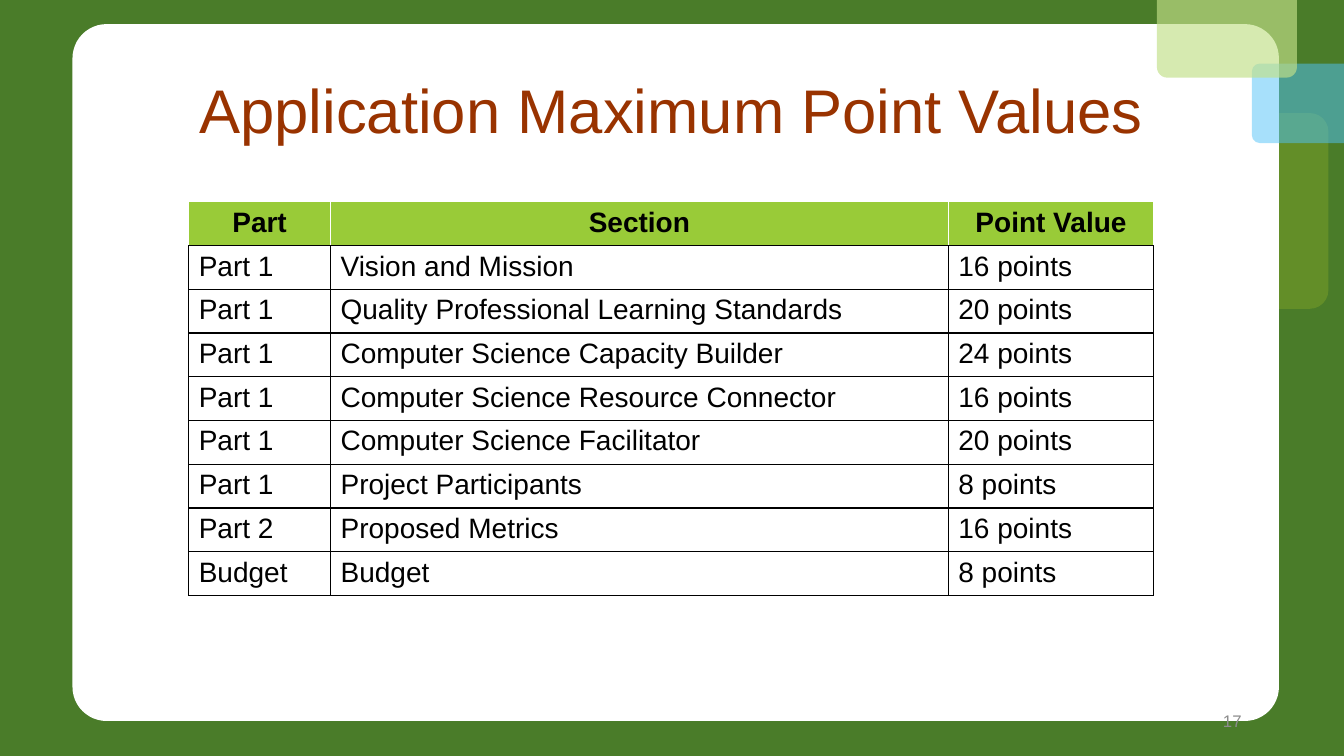
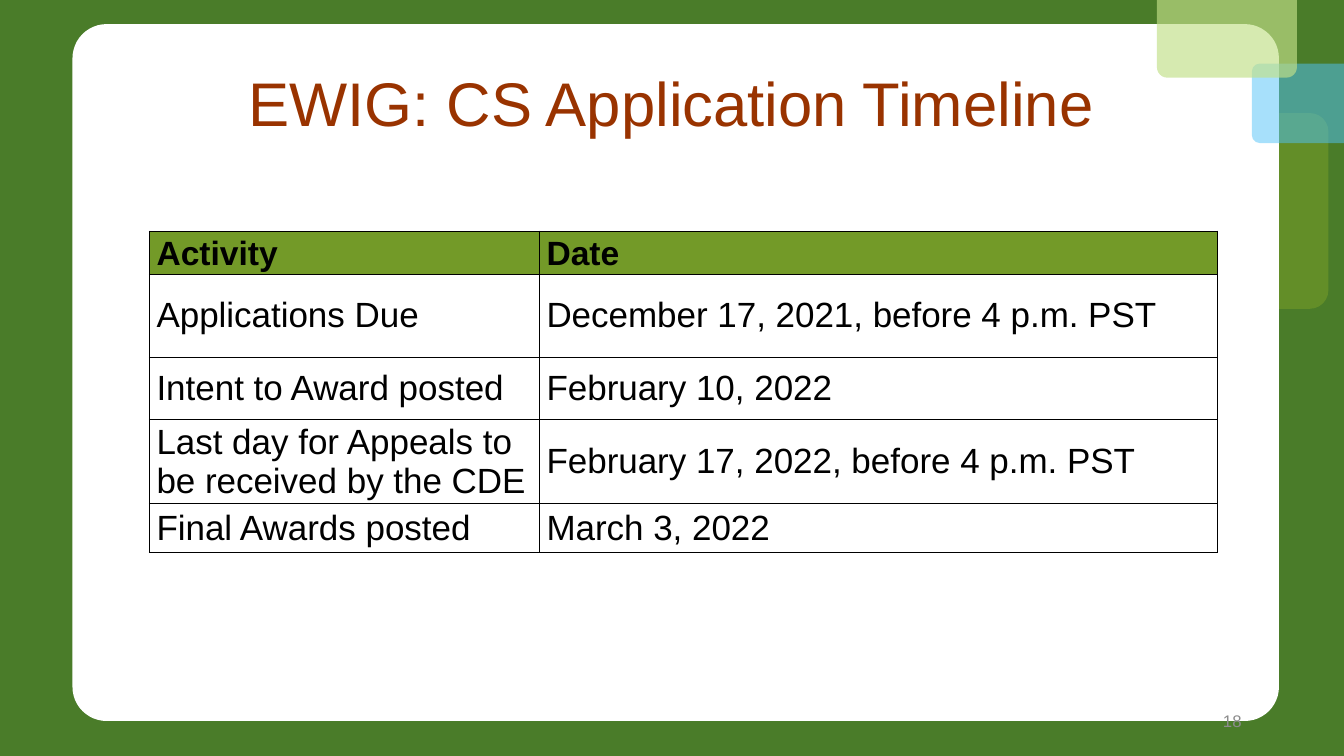
from dataclasses import dataclass

from lxml import etree
from pptx import Presentation
from pptx.dml.color import RGBColor
from pptx.enum.shapes import MSO_SHAPE
from pptx.enum.text import MSO_ANCHOR, PP_ALIGN
from pptx.oxml.ns import qn
from pptx.util import Pt

LEFT, CENTER, RIGHT = PP_ALIGN.LEFT, PP_ALIGN.CENTER, PP_ALIGN.RIGHT
TOP, MIDDLE = MSO_ANCHOR.TOP, MSO_ANCHOR.MIDDLE
ROUNDED = MSO_SHAPE.ROUNDED_RECTANGLE
BLANK_LAYOUT = 6


@dataclass(frozen=True)
class Theme:
    font: str = "Arial"
    background: str = "4A7C29"
    panel: str = "FFFFFF"
    olive: str = "739A28"
    sky: str = "51C3F9"
    pale_lime: str = "C2E088"
    lime: str = "99CB38"
    title: str = "993300"
    text: str = "000000"
    number: str = "8C8C8C"
    title_size: float = 44
    points_size: float = 20
    timeline_header_size: float = 24
    timeline_size: float = 25
    number_size: float = 12


THEME = Theme()


def color(value):
    return RGBColor.from_string(value)


def write_text(frame, text, *, size, fill=THEME.text, bold=False, align=LEFT,
               line_spacing=None):
    paragraph = frame.paragraphs[0]
    paragraph.alignment = align
    paragraph.line_spacing = line_spacing
    run = paragraph.add_run()
    run.text = text
    run.font.name = THEME.font
    run.font.size = Pt(size)
    run.font.bold = bold
    run.font.color.rgb = color(fill)


def set_borders(cell, left, right, top, bottom):
    """Draw one-point borders; call before the cell gets its fill."""
    properties = cell._tc.get_or_add_tcPr()
    for tag, value in zip(("a:lnL", "a:lnR", "a:lnT", "a:lnB"), (left, right, top, bottom)):
        line = etree.SubElement(properties, qn(tag), w=str(Pt(1)))
        fill = etree.SubElement(line, qn("a:solidFill"))
        etree.SubElement(fill, qn("a:srgbClr"), val=value)


class Deck:
    def __init__(self):
        self.presentation = Presentation()
        self.presentation.slide_width = Pt(960)
        self.presentation.slide_height = Pt(540)
        background = self.presentation.slide_master.background.fill
        background.solid()
        background.fore_color.rgb = color(THEME.background)
        self.slide = None

    def add_slide(self, title, title_top, number):
        layout = self.presentation.slide_layouts[BLANK_LAYOUT]
        self.slide = self.presentation.slides.add_slide(layout)
        self.add_panel(789.3, 80.8, 159.6, 139.8, 0.095, THEME.olive, 62)
        self.add_panel(51.8, 17.2, 861.8, 497.8, 0.049, THEME.panel)
        self.add_panel(894.2, 45.4, 159.8, 56.8, 0.1, THEME.sky, 50)
        self.add_panel(826.4, -38.2, 100, 93.7, 0.08, THEME.pale_lime, 66)
        self.add_text(title, 106.5, title_top, 746.6, 104.4, size=THEME.title_size,
                      fill=THEME.title, align=CENTER, line_spacing=0.9)
        self.add_text(number, 678, 500.5, 216, 28.8, size=THEME.number_size,
                      fill=THEME.number, align=RIGHT)

    def add_panel(self, left, top, width, height, rounding, fill, opacity=100):
        shape = self.slide.shapes.add_shape(ROUNDED, Pt(left), Pt(top), Pt(width), Pt(height))
        shape.shadow.inherit = False
        shape.adjustments[0] = rounding
        shape.line.fill.background()
        shape.fill.solid()
        shape.fill.fore_color.rgb = color(fill)
        if opacity < 100:
            fill_color = shape.fill._xPr.find(qn("a:solidFill"))[0]
            etree.SubElement(fill_color, qn("a:alpha"), val=str(opacity * 1000))

    def add_text(self, text, left, top, width, height, **text_format):
        box = self.slide.shapes.add_textbox(Pt(left), Pt(top), Pt(width), Pt(height))
        box.text_frame.word_wrap = True
        box.text_frame.vertical_anchor = MIDDLE
        write_text(box.text_frame, text, **text_format)

    def add_table(self, rows, left, top, widths, heights, *, header_fill, header_format,
                  body_format, header_border=THEME.text, anchor=TOP, margins=(7.2, 3.6)):
        table = self.slide.shapes.add_table(len(rows), len(widths), Pt(left), Pt(top),
                                            Pt(sum(widths)), Pt(sum(heights))).table
        table.horz_banding = False
        table.first_row = False
        for column, width in zip(table.columns, widths):
            column.width = Pt(width)
        for row_index, (values, height) in enumerate(zip(rows, heights)):
            table.rows[row_index].height = Pt(height)
            is_header = row_index == 0
            border = header_border if is_header else THEME.text
            for column_index, value in enumerate(values):
                cell = table.cell(row_index, column_index)
                set_borders(cell, border, border, border, THEME.text)
                cell.fill.solid()
                cell.fill.fore_color.rgb = color(header_fill if is_header else THEME.panel)
                cell.vertical_anchor = anchor
                cell.margin_left = cell.margin_right = Pt(margins[0])
                cell.margin_top = cell.margin_bottom = Pt(margins[1])
                write_text(cell.text_frame, value,
                           **(header_format if is_header else body_format))


def add_point_values(deck):
    deck.add_slide("Application Maximum Point Values", 28.6, "17")
    rows = [
        ("Part", "Section", "Point Value"),
        ("Part 1", "Vision and Mission", "16 points"),
        ("Part 1", "Quality Professional Learning Standards", "20 points"),
        ("Part 1", "Computer Science Capacity Builder", "24 points"),
        ("Part 1", "Computer Science Resource Connector", "16 points"),
        ("Part 1", "Computer Science Facilitator", "20 points"),
        ("Part 1", "Project Participants", "8 points"),
        ("Part 2", "Proposed Metrics", "16 points"),
        ("Budget", "Budget", "8 points"),
    ]
    deck.add_table(rows, 134.8, 144.2, (101.3, 441.3, 146.8), [29.5] * len(rows),
                   header_fill=THEME.lime, header_border=THEME.panel,
                   header_format=dict(size=THEME.points_size, bold=True, align=CENTER),
                   body_format=dict(size=THEME.points_size))


def add_timeline(deck):
    deck.add_slide("EWIG: CS Application Timeline", 23.6, "18")
    rows = [
        ("Activity", "Date"),
        ("Applications Due", "December 17, 2021, before 4 p.m. PST"),
        ("Intent to Award posted", "February 10, 2022"),
        ("Last day for Appeals to be received by the CDE",
         "February 17, 2022, before 4 p.m. PST"),
        ("Final Awards posted", "March 3, 2022"),
    ]
    deck.add_table(rows, 106.8, 165.2, (278.6, 484), (30.8, 59.2, 44.4, 44.4, 35.2),
                   header_fill=THEME.olive, anchor=MIDDLE, margins=(5, 0),
                   header_format=dict(size=THEME.timeline_header_size, bold=True,
                                      line_spacing=1.07),
                   body_format=dict(size=THEME.timeline_size))


def main():
    deck = Deck()
    add_point_values(deck)
    add_timeline(deck)
    deck.presentation.save("out.pptx")


if __name__ == "__main__":
    main()
